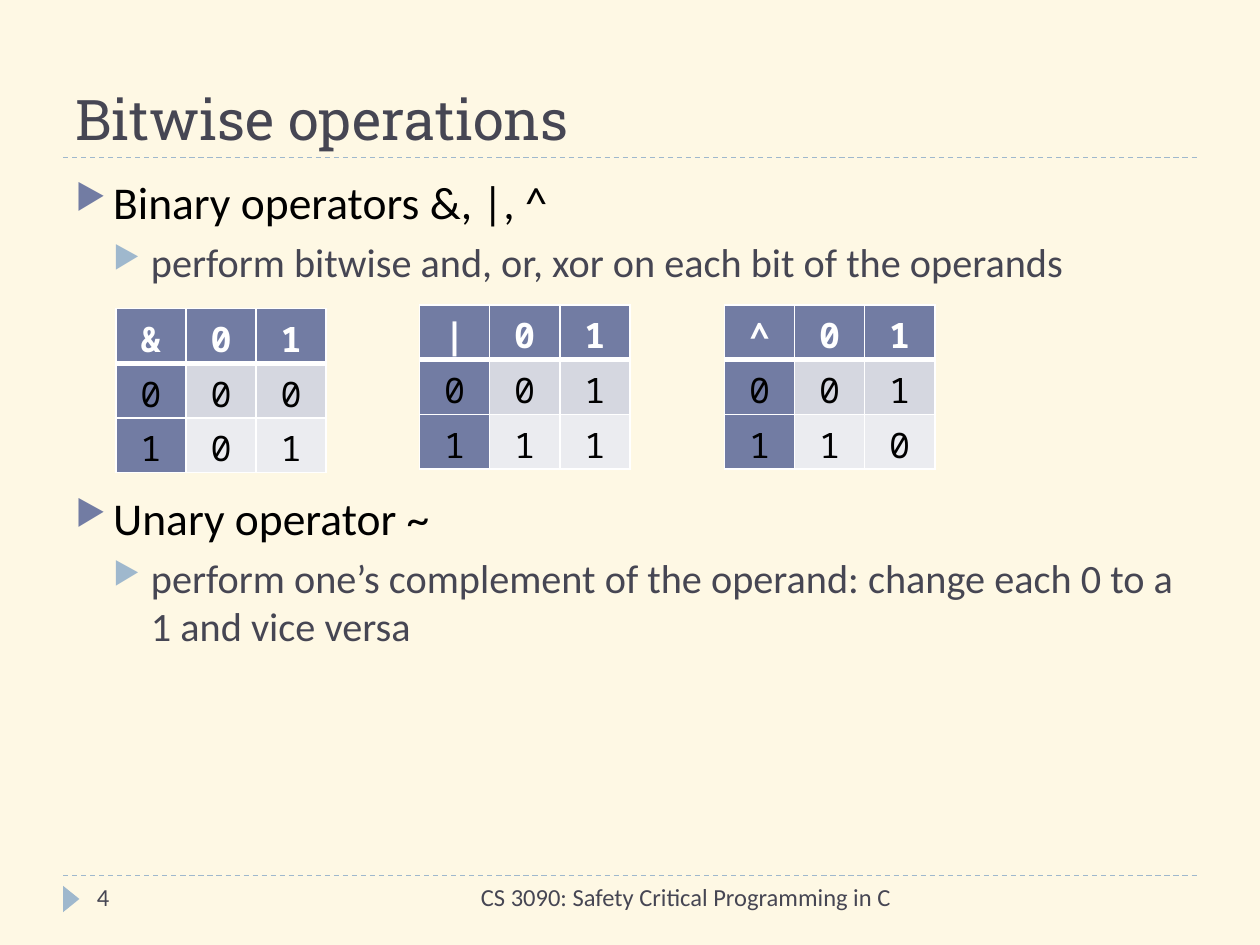
from dataclasses import dataclass

import pptx
import pptx.dml.color
import pptx.enum.dml
import pptx.enum.shapes
import pptx.enum.text
import pptx.oxml
import pptx.oxml.ns
import pptx.util
from pptx.dml.color import RGBColor
from pptx.util import Inches

CREAM = RGBColor(0xFE, 0xF8, 0xE4)
SLATE = RGBColor(0x46, 0x46, 0x53)
INDIGO = RGBColor(0x72, 0x7C, 0xA3)
SKY = RGBColor(0x9F, 0xB8, 0xCD)
BLACK = RGBColor(0, 0, 0)
WHITE = RGBColor(0xFF, 0xFF, 0xFF)
ROW_TINTS = (RGBColor(0xD5, 0xD7, 0xE0), RGBColor(0xEB, 0xEC, 0xF0))

ALIGN = pptx.enum.text.PP_ALIGN
ANCHOR = pptx.enum.text.MSO_ANCHOR


@dataclass(frozen=True)
class Level:
    indent: float
    size: int
    color: RGBColor
    bullet: RGBColor


@dataclass(frozen=True)
class Point:
    text: str
    level: int
    space_before: int


@dataclass(frozen=True)
class TruthTable:
    operator: str
    left: float
    top: float
    results: tuple[str, str]


LEVELS = (Level(0.3, 26, BLACK, INDIGO), Level(0.6, 23, SLATE, SKY))

# The third point leaves room above it for the truth tables.
POINTS = (
    Point("Binary operators &, |, ^", 0, 6),
    Point("perform bitwise and, or, xor on each bit of the operands", 1, 5),
    Point("Unary operator ~", 0, 117),
    Point("perform one’s complement of the operand: change each 0 to a 1 and vice versa", 1, 5),
)

TRUTH_TABLES = (
    TruthTable("&", 0.92, 2.45, ("00", "01")),
    TruthTable("|", 3.33, 2.42, ("01", "11")),
    TruthTable("^", 5.75, 2.42, ("01", "10")),
)


def write(paragraph, text: str, color: RGBColor, **font_format) -> None:
    run = paragraph.add_run()
    run.text = text
    run.font.color.rgb = color
    for attribute, value in font_format.items():
        setattr(run.font, attribute, value)


def add_text_frame(slide, left: float, top: float, width: float, height: float,
                   anchor=ANCHOR.TOP):
    box = slide.shapes.add_textbox(Inches(left), Inches(top), Inches(width), Inches(height))
    frame = box.text_frame
    frame_format = {"word_wrap": True, "vertical_anchor": anchor}
    for attribute, value in frame_format.items():
        setattr(frame, attribute, value)
    return frame


def add_rule(slide, y: float) -> None:
    """Draw a dashed line across the content width."""
    rule = slide.shapes.add_connector(
        pptx.enum.shapes.MSO_CONNECTOR.STRAIGHT, Inches(0.5), Inches(y), Inches(9.5), Inches(y))
    rule.line.color.rgb = SKY
    rule.line.width = pptx.util.Pt(0.75)
    rule.line.dash_style = pptx.enum.dml.MSO_LINE.DASH
    pptx.oxml.ns.qn("a:effectLst")
    rule._element.spPr.append(pptx.oxml.parse_xml(
        f"<a:effectLst {pptx.oxml.ns.nsdecls('a')}/>"))


def add_page_marker(slide) -> None:
    marker = slide.shapes.add_shape(
        pptx.enum.shapes.MSO_SHAPE.ISOSCELES_TRIANGLE,
        Inches(0.46), Inches(7.07), Inches(0.21), Inches(0.13))
    marker.rotation = 90
    marker.shadow.inherit = False
    marker.fill.solid()
    marker.fill.fore_color.rgb = SKY
    marker.line.fill.background()


def set_bullet(paragraph, level: Level) -> None:
    properties = paragraph._p.get_or_add_pPr()
    properties.set("marL", str(Inches(level.indent)))
    properties.set("indent", str(Inches(-0.3)))
    ns = pptx.oxml.ns.nsdecls("a")
    for xml in (
        f'<a:buClr {ns}><a:srgbClr val="{level.bullet}"/></a:buClr>',
        f'<a:buSzPct {ns} val="76000"/>',
        f'<a:buChar {ns} char="▶"/>',
    ):
        properties.append(pptx.oxml.parse_xml(xml))


def add_points(slide) -> None:
    frame = add_text_frame(slide, 0.5, 1.33, 9, 5.4)
    for index, point in enumerate(POINTS):
        paragraph = frame.add_paragraph() if index else frame.paragraphs[0]
        level = LEVELS[point.level]
        paragraph.level = point.level
        paragraph.space_before = pptx.util.Pt(point.space_before)
        set_bullet(paragraph, level)
        write(paragraph, point.text, level.color, name="Calibri", size=pptx.util.Pt(level.size))


def set_borders(cell, widths: dict[str, int]) -> None:
    """Give each named side a white border of the given width in points."""
    properties = cell._tc.get_or_add_tcPr()
    for index, (side, width) in enumerate(widths.items()):
        properties.insert(index, pptx.oxml.parse_xml(
            f'<a:ln{side} {pptx.oxml.ns.nsdecls("a")} w="{pptx.util.Pt(width)}">'
            f'<a:solidFill><a:srgbClr val="{WHITE}"/></a:solidFill></a:ln{side}>'))


def add_truth_table(slide, truth: TruthTable) -> None:
    table = slide.shapes.add_table(
        3, 3, Inches(truth.left), Inches(truth.top), Inches(1.67), Inches(1.14)).table
    for column in table.columns:
        column.width = Inches(1.67 / 3)
    lines = (truth.operator + "01", "0" + truth.results[0], "1" + truth.results[1])
    for row, line in enumerate(lines):
        table.rows[row].height = Inches(0.38)
        for column, symbol in enumerate(line):
            cell = table.cell(row, column)
            is_header = row == 0
            cell.fill.solid()
            cell.fill.fore_color.rgb = INDIGO if is_header or column == 0 else ROW_TINTS[row - 1]
            set_borders(cell, {"L": 1, "R": 1, "T": 3 if row == 1 else 1,
                               "B": 3 if is_header else 1})
            paragraph = cell.text_frame.paragraphs[0]
            paragraph.alignment = ALIGN.CENTER
            write(paragraph, symbol, WHITE if is_header else BLACK,
                  name="Noto Sans Mono", size=pptx.util.Pt(20), bold=is_header)


def main() -> None:
    deck = pptx.Presentation()
    deck.slide_width, deck.slide_height = Inches(10), Inches(7.5)
    slide = deck.slides.add_slide(deck.slide_layouts[6])
    slide.background.fill.solid()
    slide.background.fill.fore_color.rgb = CREAM

    for y in (6.95, 1.25):
        add_rule(slide, y)
    add_page_marker(slide)

    title = add_text_frame(slide, 0.5, 0.17, 9, 1.08, ANCHOR.BOTTOM).paragraphs[0]
    write(title, "Bitwise operations", SLATE, name="Roboto Slab", size=pptx.util.Pt(32))

    small_print = {"name": "Calibri", "size": pptx.util.Pt(14)}
    course = add_text_frame(slide, 3.17, 6.95, 4, 0.4).paragraphs[0]
    course.alignment = ALIGN.RIGHT
    write(course, "CS 3090: Safety Critical Programming in C", SLATE, **small_print)
    page_number = add_text_frame(slide, 0.67, 6.95, 2.17, 0.4).paragraphs[0]
    write(page_number, "4", SLATE, **small_print)

    add_points(slide)
    for truth in TRUTH_TABLES:
        add_truth_table(slide, truth)

    deck.save("out.pptx")


if __name__ == "__main__":
    main()
